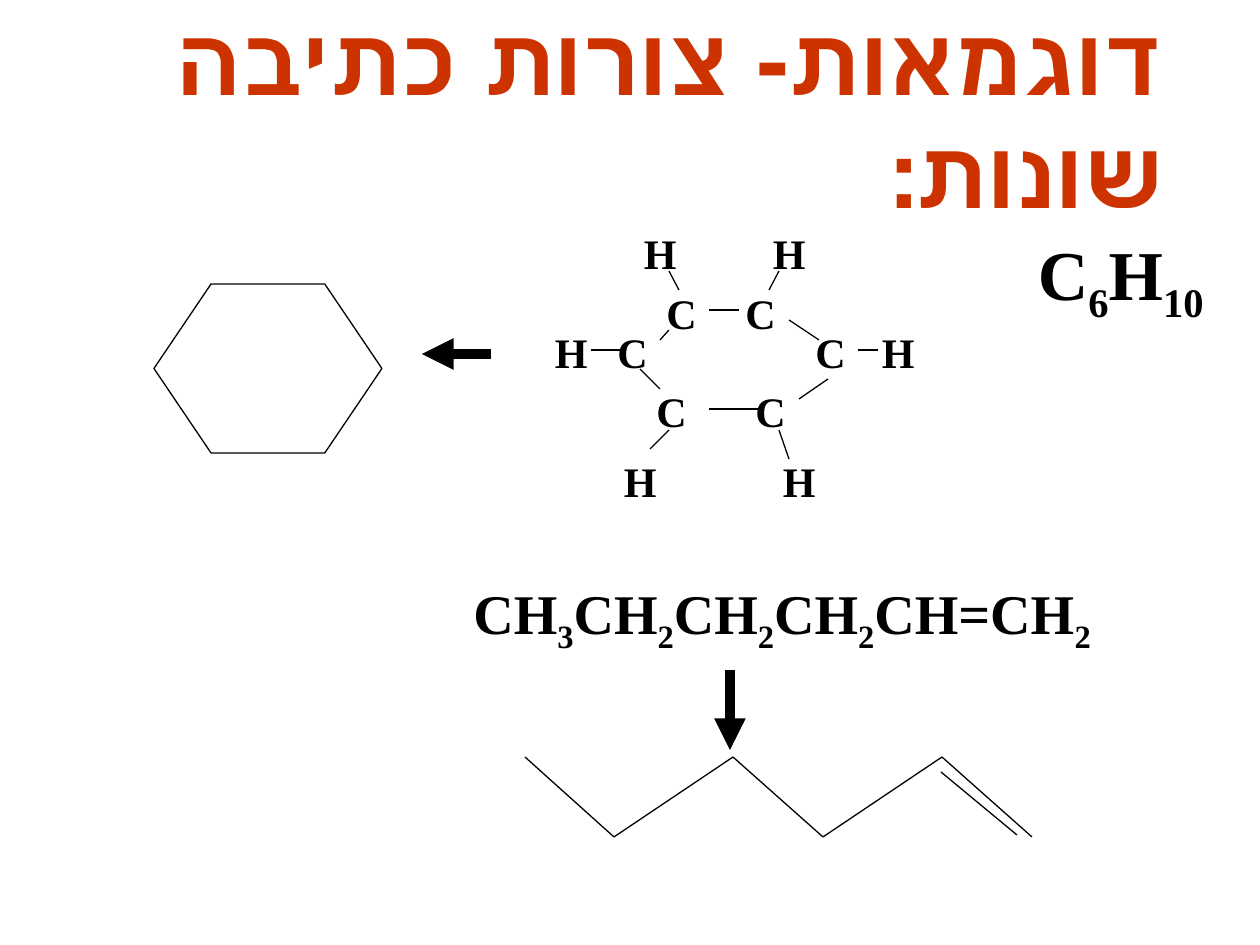
"""Build a slide of different ways to write chemical formulas."""
from itertools import pairwise

from lxml.etree import SubElement
from pptx import Presentation
from pptx.dml.color import RGBColor
from pptx.enum.shapes import MSO_CONNECTOR as CONNECTOR, MSO_SHAPE as SHAPE
from pptx.enum.text import MSO_ANCHOR as ANCHOR, MSO_AUTO_SIZE as AUTO_SIZE, PP_ALIGN as ALIGN
from pptx.oxml.ns import qn
from pptx.util import Emu, Pt

BLACK = RGBColor(0x00, 0x00, 0x00)
RED = RGBColor(0xCC, 0x33, 0x00)
FONT = "Times New Roman"
EMU_PER_PX = 914400 / 126

CARBONS = [(709, 281), (630, 281), (581, 320), (620, 379), (719, 379), (779, 320)]
HYDROGENS = [(868, 320), (769, 449), (610, 449), (541, 320), (630, 221), (759, 221)]
RING_BONDS = [
    ((669, 330), (660, 340)), ((709, 310), (739, 310)), ((789, 320), (819, 340)),
    ((828, 379), (799, 399)), ((709, 409), (759, 409)), ((640, 369), (660, 389)),
]
HYDROGEN_BONDS = [
    ((669, 271), (679, 290)), ((779, 271), (769, 290)), ((858, 350), (878, 350)),
    ((779, 430), (789, 459)), ((669, 430), (650, 449)), ((591, 350), (620, 350)),
]
CHAIN = [(525, 757), (614, 837), (733, 757), (823, 837), (942, 757), (1032, 837)]
DOUBLE_BOND = ((941, 772), (1017, 835))


def px(*lengths):
    return [Emu(round(length * EMU_PER_PX)) for length in lengths]


def style_run(run, size, color):
    run.font.name = FONT
    run.font.size = Pt(size)
    run.font.bold = True
    run.font.color.rgb = color


def add_title(slide, text):
    title = slide.shapes.title
    title.left, title.top, title.width, title.height = px(105, 35, 1071, 158)
    frame = title.text_frame
    frame.text = text
    frame.word_wrap = True
    frame.auto_size = AUTO_SIZE.NONE
    frame.vertical_anchor = ANCHOR.MIDDLE
    paragraph = frame.paragraphs[0]
    paragraph.alignment = ALIGN.RIGHT
    paragraph._p.get_or_add_pPr().set("rtl", "1")
    style_run(paragraph.runs[0], 54, RED)


def add_formula(shapes, box, parts, size, alignment=ALIGN.RIGHT):
    """Add a text box whose every second part is a subscript."""
    frame = shapes.add_textbox(*px(*box)).text_frame
    frame.word_wrap = True
    frame.auto_size = AUTO_SIZE.SHAPE_TO_FIT_TEXT
    paragraph = frame.paragraphs[0]
    paragraph.alignment = alignment
    properties = paragraph._p.get_or_add_pPr()
    properties.set("rtl", "1")
    space_before = SubElement(properties, qn("a:spcBef"))
    SubElement(space_before, qn("a:spcPct")).set("val", "50000")
    for index, part in enumerate(parts):
        run = paragraph.add_run()
        run.text = part
        style_run(run, size, BLACK)
        if index % 2:
            run.font._element.set("baseline", "-25000")


def add_line(shapes, start, end, width=0.75):
    line = shapes.add_connector(CONNECTOR.STRAIGHT, *px(*start, *end))
    line.line.color.rgb = BLACK
    line.line.width = Pt(width)
    SubElement(line._element.spPr, qn("a:effectLst"))
    return line


def add_arrow(shapes, start, end):
    arrow = add_line(shapes, start, end, 6)
    SubElement(arrow.line._get_or_add_ln(), qn("a:tailEnd")).set("type", "triangle")


def add_hexagon(shapes, box):
    hexagon = shapes.add_shape(SHAPE.HEXAGON, *px(*box))
    hexagon.shadow.inherit = False
    hexagon.adjustments[0] = 0.338
    hexagon.fill.background()
    hexagon.line.color.rgb = BLACK
    hexagon.line.width = Pt(0.75)


def add_ring(slide):
    shapes = slide.shapes.add_group_shape().shapes
    for left, top in CARBONS:
        add_formula(shapes, (left, top, 79, 63), ["C"], 24)
    for start, end in RING_BONDS + HYDROGEN_BONDS:
        add_line(shapes, start, end)
    for left, top in HYDROGENS:
        add_formula(shapes, (left, top, 59, 63), ["H"], 24)


def add_chain(slide):
    shapes = slide.shapes.add_group_shape().shapes
    for start, end in [*pairwise(CHAIN), DOUBLE_BOND]:
        add_line(shapes, start, end)


def main():
    presentation = Presentation()
    presentation.slide_width, presentation.slide_height = px(1260, 945)
    slide = presentation.slides.add_slide(presentation.slide_layouts[5])
    add_title(slide, "דוגמאות- צורות כתיבה שונות:")
    add_hexagon(slide.shapes, (154, 284, 228, 169))
    add_formula(slide.shapes, (988, 224, 228, 97), ["C", "6", "H", "10"], 40)
    add_ring(slide)
    hexene = ["CH", "3", "CH", "2", "CH", "2", "CH", "2", "CH=CH", "2"]
    add_formula(slide.shapes, (461, 572, 655, 79), hexene, 32, ALIGN.LEFT)
    add_arrow(slide.shapes, (491, 354), (422, 354))
    add_chain(slide)
    add_arrow(slide.shapes, (730, 670), (730, 750))
    presentation.save("out.pptx")


if __name__ == "__main__":
    main()
